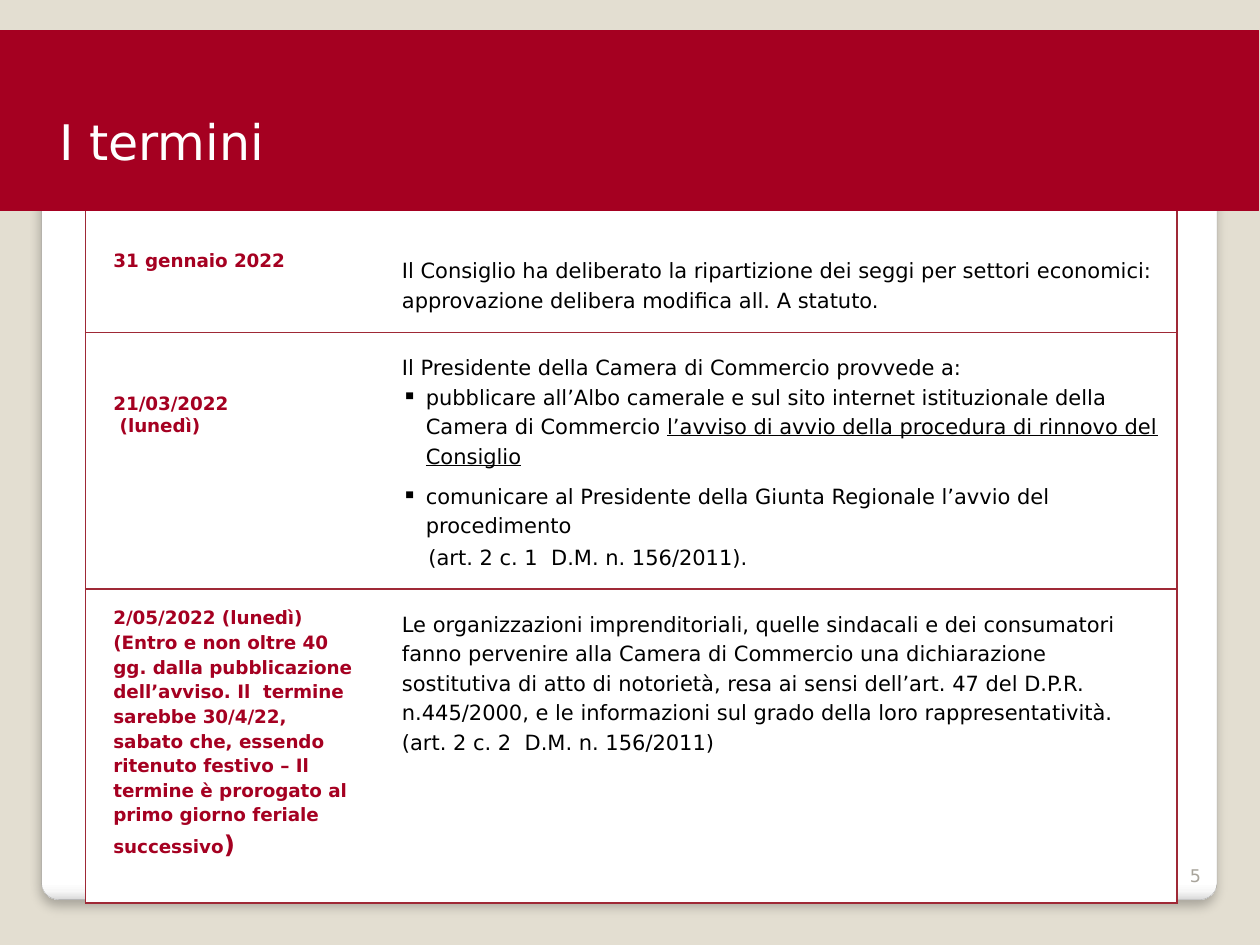
import lxml.etree
import pptx
import pptx.dml.color
import pptx.enum.shapes
import pptx.enum.text
import pptx.oxml
import pptx.oxml.ns
import pptx.util

IN, PT = pptx.util.Inches, pptx.util.Pt
SHAPE = pptx.enum.shapes.MSO_SHAPE
ANCHOR = pptx.enum.text.MSO_ANCHOR
ALIGN = pptx.enum.text.PP_ALIGN
FONT = "DejaVu Sans"
COLORS = {"ground": "E3DED1", "band": "A50021", "rule": "9F2936", "edge": "A4A4A4",
          "white": "FFFFFF", "text": "000000", "number": "A8A49B"}
NS = 'xmlns:a="http://schemas.openxmlformats.org/drawingml/2006/main"'
W, H = 10, 7.5


def rgb(name):
    return pptx.dml.color.RGBColor.from_string(COLORS[name])


def add_run(p, text, size, color, bold=False, underline=False):
    r = p.add_run()
    r.text = text
    f = r.font
    f.name, f.size, f.bold, f.underline = FONT, PT(size), bold, underline
    f.color.rgb = rgb(color)


def add_panel(s, x, y, w, h):
    sp = s.shapes.add_shape(SHAPE.ROUNDED_RECTANGLE, IN(x), IN(y), IN(w), IN(h))
    sp.adjustments[0] = 0.02
    sp.line.color.rgb = rgb("edge")
    sp.line.width = PT(0.16)
    # White fading to grey along the bottom edge
    stops = [(0, "FFFFFF"), (98, "FFFFFF"), (99, "F7F7F7"), (100, "DADADA")]
    gs = "".join(f'<a:gs pos="{pos * 1000}"><a:srgbClr val="{c}"/></a:gs>' for pos, c in stops)
    geom = sp.element.spPr.find(pptx.oxml.ns.qn("a:prstGeom"))
    geom.addnext(pptx.oxml.parse_xml(
        f'<a:gradFill {NS} rotWithShape="1"><a:gsLst>{gs}</a:gsLst>'
        '<a:lin ang="5400000" scaled="0"/></a:gradFill>'))
    # Soft shadow below
    sp.element.spPr.append(pptx.oxml.parse_xml(
        f'<a:effectLst {NS}><a:outerShdw blurRad="{PT(6)}" dist="{PT(4)}" dir="5400000" '
        'algn="t" rotWithShape="0"><a:srgbClr val="000000"><a:alpha val="25000"/>'
        '</a:srgbClr></a:outerShdw></a:effectLst>'))


def add_band(s, x, y, w, h):
    sp = s.shapes.add_shape(SHAPE.RECTANGLE, IN(x), IN(y), IN(w), IN(h))
    sp.shadow.inherit = False
    sp.fill.solid()
    sp.fill.fore_color.rgb = rgb("band")
    sp.line.color.rgb = rgb("band")
    sp.line.width = PT(0.75)


def add_title(s, x, y, w, h, text):
    sp = s.shapes.title
    sp.left, sp.top, sp.width, sp.height = IN(x), IN(y), IN(w), IN(h)
    tf = sp.text_frame
    tf.word_wrap = True
    tf.auto_size = pptx.enum.text.MSO_AUTO_SIZE.NONE
    tf.vertical_anchor = ANCHOR.MIDDLE
    p = tf.paragraphs[0]
    p.alignment = ALIGN.LEFT
    add_run(p, text, 28, "white")
    # Bring the title in front of the band
    sp.element.getparent().append(sp.element)


def add_number(s, x, y, w, h, text):
    tf = s.shapes.add_textbox(IN(x), IN(y), IN(w), IN(h)).text_frame
    tf.word_wrap = True
    tf.vertical_anchor = ANCHOR.BOTTOM
    p = tf.paragraphs[0]
    p.alignment = ALIGN.RIGHT
    add_run(p, text, 10, "number")


def set_borders(cell, sides):
    tcPr = cell._tc.get_or_add_tcPr()
    for i, side in enumerate("LRTB"):
        paint = (f'<a:solidFill><a:srgbClr val="{COLORS["rule"]}"/></a:solidFill>'
                 if side in sides else "<a:noFill/>")
        tcPr.insert(i, pptx.oxml.parse_xml(f'<a:ln{side} {NS} w="{PT(1)}">{paint}</a:ln{side}>'))


def fill_cell(cell, top, paragraphs, size, color, bold):
    cell.fill.solid()
    cell.fill.fore_color.rgb = rgb("white")
    cell.margin_left = cell.margin_right = cell.margin_bottom = IN(0.15)
    cell.margin_top = IN(top)
    tf = cell.text_frame
    for i, spec_p in enumerate(paragraphs):
        p = tf.add_paragraph() if i else tf.paragraphs[0]
        p.alignment = ALIGN.LEFT
        p.line_spacing = spec_p.get("spacing", 1.2)
        p.space_before = PT(spec_p.get("before", 0))
        p.space_after = PT(spec_p.get("after", 0))
        bullet = spec_p.get("bullet", False)
        pPr = p._p.get_or_add_pPr()
        pPr.set("marL", str(IN(0.27 if bullet else spec_p.get("indent", 0.08))))
        pPr.set("indent", str(IN(-0.19 if bullet else 0)))
        if bullet:
            lxml.etree.SubElement(pPr, pptx.oxml.ns.qn("a:buChar")).set("char", "▪")
        for text, *style in spec_p["runs"]:
            add_run(p, text, **{"size": size, "color": color, "bold": bold,
                                **(style[0] if style else {})})


def add_terms(s, x, y, cols, heights, rows):
    tbl = s.shapes.add_table(len(rows), len(cols), IN(x), IN(y),
                             IN(sum(cols)), IN(sum(heights))).table
    tbl.first_row = tbl.horz_banding = False
    for col, width in zip(tbl.columns, cols):
        col.width = IN(width)
    for i, ((date_top, date), (text_top, text)) in enumerate(rows):
        tbl.rows[i].height = IN(heights[i])
        fill_cell(tbl.cell(i, 0), date_top, date, 10.5, "band", True)
        fill_cell(tbl.cell(i, 1), text_top, text, 12, "text", False)
        set_borders(tbl.cell(i, 0), "LTB")
        set_borders(tbl.cell(i, 1), "RTB")


# Each row: (top margin, paragraphs) for the date and for the duty
EXACT = {"spacing": PT(12.1), "indent": 0.07}
ROWS = [
    ((0.32, [{**EXACT, "runs": [("31 gennaio 2022",)]}]),
     (0.35, [{"runs": [("Il Consiglio ha deliberato la ripartizione dei seggi per settori "
                        "economici: approvazione delibera modifica all. A statuto.",)]}])),
    ((0.49, [{**EXACT, "runs": [("21/03/2022",)]},
             {**EXACT, "indent": 0.12, "runs": [("(lunedì)",)]}]),
     (0.15, [{"runs": [("Il Presidente della Camera di Commercio provvede a:",)]},
             {"bullet": True, "after": 6, "runs": [
                 ("pubblicare all’Albo camerale e sul sito internet istituzionale della "
                  "Camera di Commercio ",),
                 ("l’avviso di avvio della procedura di rinnovo del Consiglio",
                  {"underline": True})]},
             {"bullet": True, "runs": [("comunicare al Presidente della Giunta Regionale "
                                        "l’avvio del procedimento",)]},
             {"indent": 0.29, "before": 0.9,
              "runs": [("(art. 2 c. 1  D.M. n. 156/2011).",)]}])),
    ((0.15, [{"spacing": 1.0, "indent": 0.07, "before": 2.5, "runs": [("2/05/2022 (lunedì)",)]},
             {"spacing": 1.15, "indent": 0.07, "runs": [
                 ("(Entro e non oltre 40 gg. dalla pubblicazione dell’avviso. Il  termine "
                  "sarebbe 30/4/22, sabato che, essendo ritenuto festivo – Il termine è "
                  "prorogato al primo giorno feriale successivo",),
                 (")", {"size": 14})]}]),
     (0.15, [{"runs": [("Le organizzazioni imprenditoriali, quelle sindacali e dei consumatori "
                        "fanno pervenire alla Camera di Commercio una dichiarazione sostitutiva "
                        "di atto di notorietà, resa ai sensi dell’art. 47 del D.P.R. "
                        "n.445/2000, e le informazioni sul grado della loro "
                        "rappresentatività.",)]},
             {"runs": [("(art. 2 c. 2  D.M. n. 156/2011)",)]}])),
]


def main():
    prs = pptx.Presentation()
    prs.slide_width, prs.slide_height = IN(W), IN(H)
    s = prs.slides.add_slide(prs.slide_layouts[5])
    s.background.fill.solid()
    s.background.fill.fore_color.rgb = rgb("ground")
    add_panel(s, 0.33, 0.36, 9.33, 6.78)
    add_terms(s, 0.68, 1.67, [2.28, 6.38], [0.96, 2.03, 2.49], ROWS)
    add_band(s, -0.01, 0.24, W, 1.43)
    add_number(s, 9.13, 6.68, 0.5, 0.4, "5")
    add_title(s, 0.37, 0.83, 9.25, 0.57, "I termini")
    prs.save("out.pptx")


if __name__ == "__main__":
    main()
